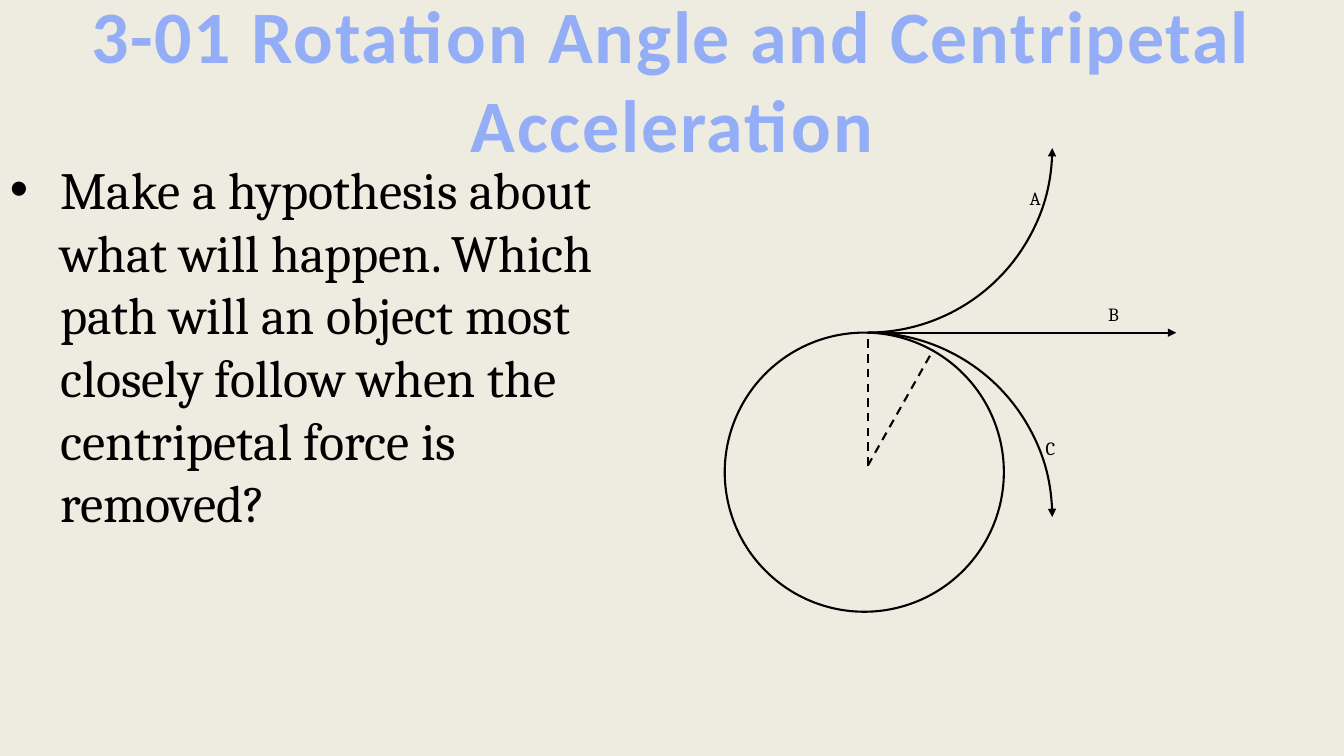
from lxml import etree
from pptx import Presentation
from pptx.dml.color import RGBColor
from pptx.enum.dml import MSO_LINE
from pptx.enum.shapes import MSO_CONNECTOR, MSO_SHAPE
from pptx.enum.text import MSO_ANCHOR, PP_ALIGN
from pptx.oxml import parse_xml
from pptx.oxml.ns import nsdecls, qn
from pptx.util import Pt

ARC, CIRCLE = MSO_SHAPE.ARC, MSO_SHAPE.OVAL
STRAIGHT = MSO_CONNECTOR.STRAIGHT
DASH = MSO_LINE.DASH
CENTER = PP_ALIGN.CENTER
MIDDLE, TOP = MSO_ANCHOR.MIDDLE, MSO_ANCHOR.TOP

CREAM = RGBColor(0xEE, 0xEC, 0xE1)
BLACK = RGBColor(0x00, 0x00, 0x00)
TITLE_FILL = RGBColor(0x0D, 0x7B, 0xFF)
TITLE_OUTLINE = RGBColor(0x93, 0xAE, 0xF7)

# The point where the object is released, at the top of the circle
RELEASE_X, RELEASE_Y = 619.9, 237.6
CIRCLE_LEFT, CIRCLE_SIZE = 517.7, 199.4
ARC_SIZE = 263.5
CENTER_Y = 332.6
LABELS = [("A", 725.8, 125.3), ("B", 781.9, 208.1), ("C", 737.3, 303.8)]


def add_text(slide, text, left, top, width, height, font_name, size,
             anchor=TOP):
    box = slide.shapes.add_textbox(Pt(left), Pt(top), Pt(width), Pt(height))
    frame = box.text_frame
    frame.word_wrap = True
    frame.vertical_anchor = anchor
    frame.text = text
    run = frame.paragraphs[0].runs[0]
    run.font.name = font_name
    run.font.size = Pt(size)
    run.font.color.rgb = BLACK
    return frame


def outline_run(run):
    """Give a run a nearly clear fill, a coloured outline and wider spacing."""
    run.font.color.rgb = TITLE_FILL
    properties = run.font._element
    properties.set("spc", "130")
    fill_color = properties.find(qn("a:solidFill"))[0]
    etree.SubElement(fill_color, qn("a:alpha"), val="6000")
    properties.insert(0, parse_xml(
        f'<a:ln {nsdecls("a")} w="{Pt(1.42)}"><a:solidFill>'
        f'<a:srgbClr val="{TITLE_OUTLINE}"/></a:solidFill></a:ln>'))


def add_bullet(paragraph, indent):
    properties = paragraph._p.get_or_add_pPr()
    properties.set("marL", str(Pt(indent)))
    properties.set("indent", str(-Pt(indent)))
    etree.SubElement(properties, qn("a:buFont"), typeface="Arial")
    etree.SubElement(properties, qn("a:buChar"), char="•")


def style_line(line, arrow=False, dashed=False):
    line.color.rgb = BLACK
    line.width = Pt(1.5)
    if dashed:
        line.dash_style = DASH
    if arrow:
        etree.SubElement(line._get_or_add_ln(), qn("a:tailEnd"),
                         type="triangle")


def add_curve(slide, kind, left, top, size, arrow=False, flipped=False):
    curve = slide.shapes.add_shape(kind, Pt(left), Pt(top), Pt(size), Pt(size))
    curve.shadow.inherit = False
    curve.fill.background()
    style_line(curve.line, arrow)
    if flipped:
        curve._element.spPr.find(qn("a:xfrm")).set("flipV", "1")


def add_line(slide, start, end, arrow=False, dashed=False):
    line = slide.shapes.add_connector(
        STRAIGHT, *(Pt(length) for length in start + end))
    style_line(line.line, arrow, dashed)
    etree.SubElement(line._element.spPr, qn("a:effectLst"))


def add_label(slide, letter, left, top):
    frame = add_text(slide, letter, left, top, 26.6, 29.5, "Cambria", 13.3)
    frame.margin_left = frame.margin_right = Pt(9.6)
    frame.margin_top = frame.margin_bottom = Pt(4.8)
    frame.paragraphs[0].line_spacing = 1.2


def add_diagram(slide):
    release = (RELEASE_X, RELEASE_Y)
    arc_left = RELEASE_X - ARC_SIZE / 2

    # Circular motion and the three possible paths
    add_curve(slide, CIRCLE, CIRCLE_LEFT, RELEASE_Y, CIRCLE_SIZE)
    add_curve(slide, ARC, arc_left, RELEASE_Y - ARC_SIZE, ARC_SIZE,
              arrow=True, flipped=True)
    add_curve(slide, ARC, arc_left, RELEASE_Y, ARC_SIZE, arrow=True)
    add_line(slide, release, (840.2, RELEASE_Y), arrow=True)
    for letter, left, top in LABELS:
        add_label(slide, letter, left, top)

    # Radii that mark the rotation angle
    for rim in (release, (666.7, 249.8)):
        add_line(slide, (RELEASE_X, CENTER_Y), rim, dashed=True)


def main():
    deck = Presentation()
    deck.slide_width, deck.slide_height = Pt(960), Pt(540)
    slide = deck.slides.add_slide(deck.slide_layouts[6])
    slide.background.fill.solid()
    slide.background.fill.fore_color.rgb = CREAM

    # Title
    title = add_text(slide, "3-01 Rotation Angle and Centripetal Acceleration",
                     0, 2, 960, 108, "Calibri", 52.8, MIDDLE).paragraphs[0]
    title.alignment = CENTER
    title.runs[0].font.bold = True
    outline_run(title.runs[0])

    # Question
    question = add_text(
        slide,
        "Make a hypothesis about what will happen. Which path will an object "
        "most closely follow when the centripetal force is removed?",
        0, 108.7, 472.3, 373.7, "Cambria", 37.3)
    add_bullet(question.paragraphs[0], 36)

    add_diagram(slide)
    deck.save("out.pptx")


if __name__ == "__main__":
    main()
